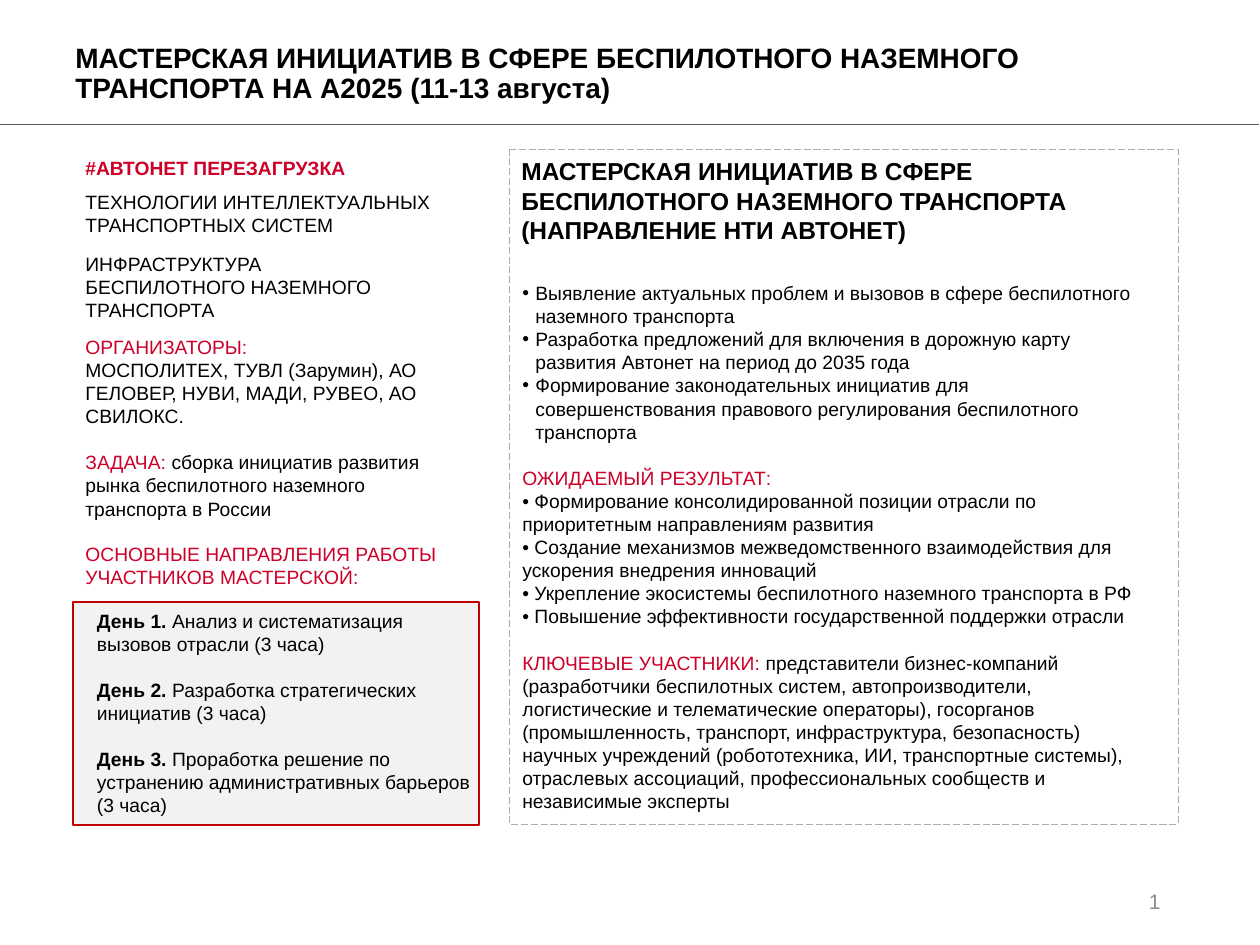
from dataclasses import dataclass

from lxml.etree import SubElement
from pptx import Presentation
from pptx.dml.color import RGBColor
from pptx.enum.dml import MSO_LINE
from pptx.enum.shapes import MSO_CONNECTOR, MSO_SHAPE
from pptx.enum.text import MSO_ANCHOR, PP_ALIGN
from pptx.oxml.ns import qn
from pptx.util import Emu, Pt

PX_PER_INCH = 126
BLACK, RED, FRAME_RED = "000000", "CC0029", "C00000"
RULE_GREY, FRAME_GREY, PANEL_GREY, NUMBER_GREY = "595959", "AFABAB", "F2F2F2", "8C8C8C"
LINE_GAP = 23
LEFT = 73


def px(length):
    return Emu(round(length * 914400 / PX_PER_INCH))


def rgb(value):
    return RGBColor.from_string(value)


@dataclass
class Span:
    text: str
    color: str = BLACK
    bold: bool = False
    new_line: bool = False


@dataclass
class Para:
    spans: list
    gap: int = 0
    bullet: bool = False


def plain(text, **options):
    return Para([Span(text)], **options)


class Slide:
    font = "Arial"
    bullet_indent = 13

    def __init__(self, deck):
        self.page = deck.slides.add_slide(deck.slide_layouts[6])

    def rule(self, x1, y1, x2, y2, color, width):
        line = self.page.shapes.add_connector(
            MSO_CONNECTOR.STRAIGHT, px(x1), px(y1), px(x2), px(y2))
        line.line.color.rgb = rgb(color)
        line.line.width = Pt(width)
        SubElement(line._element.spPr, qn("a:effectLst"))

    def panel(self, kind, at, color, width, fill=None, dash=None):
        shape = self.page.shapes.add_shape(kind, *map(px, at))
        shape.shadow.inherit = False
        if fill:
            shape.fill.solid()
            shape.fill.fore_color.rgb = rgb(fill)
        else:
            shape.fill.background()
        shape.line.color.rgb = rgb(color)
        shape.line.width = Pt(width)
        if dash:
            shape.line.dash_style = dash
        return shape

    def text(self, at, paras, size=11, anchor=MSO_ANCHOR.TOP,
             align=PP_ALIGN.LEFT, spacing=None, inset=True):
        box = self.page.shapes.add_textbox(*map(px, at))
        frame = box.text_frame
        frame.word_wrap = True
        frame.vertical_anchor = anchor
        if not inset:
            frame.margin_left = frame.margin_right = 0
            frame.margin_top = frame.margin_bottom = 0
        for index, para in enumerate(paras):
            paragraph = frame.add_paragraph() if index else frame.paragraphs[0]
            paragraph.alignment = align
            if spacing:
                paragraph.line_spacing = spacing
            if para.gap:
                paragraph.space_before = px(para.gap)
            if para.bullet:
                self.bullet(paragraph)
            for span in para.spans:
                self.span(paragraph, span, size)

    def bullet(self, paragraph):
        properties = paragraph._p.get_or_add_pPr()
        indent = px(self.bullet_indent)
        properties.set("marL", str(indent))
        properties.set("indent", str(-indent))
        SubElement(properties, qn("a:buFont"), typeface=self.font)
        SubElement(properties, qn("a:buChar"), char="•")

    def span(self, paragraph, span, size):
        if span.new_line:
            paragraph.add_line_break()
        run = paragraph.add_run()
        run.text = span.text
        run.font.name = self.font
        run.font.size = Pt(size)
        run.font.bold = span.bold
        run.font.color.rgb = rgb(span.color)


def add_header(slide):
    slide.rule(-1, 124, 1259, 124, RULE_GREY, 0.5)
    slide.text((890, 876, 283, 50), [Para([Span("1", NUMBER_GREY)])], size=12,
               anchor=MSO_ANCHOR.MIDDLE, align=PP_ALIGN.RIGHT)
    title = Span("МАСТЕРСКАЯ ИНИЦИАТИВ В СФЕРЕ БЕСПИЛОТНОГО НАЗЕМНОГО "
                 "ТРАНСПОРТА НА А2025 (11-13 августа)", bold=True)
    slide.text((63, 51, 1086, 47), [Para([title])], size=16,
               anchor=MSO_ANCHOR.MIDDLE, spacing=0.9)


def add_workshop(slide):
    frame = slide.panel(MSO_SHAPE.ROUNDED_RECTANGLE, (509, 149, 669, 675),
                        FRAME_GREY, 0.5, dash=MSO_LINE.LONG_DASH)
    frame.adjustments[0] = 0
    heading = Span("МАСТЕРСКАЯ ИНИЦИАТИВ В СФЕРЕ БЕСПИЛОТНОГО НАЗЕМНОГО "
                   "ТРАНСПОРТА (НАПРАВЛЕНИЕ НТИ АВТОНЕТ)", bold=True)
    slide.text((509, 150, 669, 102), [Para([heading])], size=14)

    goals = [
        "Выявление актуальных проблем и вызовов в сфере беспилотного наземного транспорта",
        "Разработка предложений для включения в дорожную карту развития Автонет "
        "на период до 2035 года",
        "Формирование законодательных инициатив для совершенствования правового "
        "регулирования беспилотного транспорта",
    ]
    results = [
        "• Формирование консолидированной позиции отрасли по приоритетным "
        "направлениям развития",
        "• Создание механизмов межведомственного взаимодействия для ускорения "
        "внедрения инноваций",
        "• Укрепление экосистемы беспилотного наземного транспорта в РФ",
        "• Повышение эффективности государственной поддержки отрасли",
    ]
    participants = (
        "представители бизнес-компаний (разработчики беспилотных систем, "
        "автопроизводители, логистические и телематические операторы), госорганов "
        "(промышленность, транспорт, инфраструктура, безопасность) научных учреждений "
        "(робототехника, ИИ, транспортные системы), отраслевых ассоциаций, "
        "профессиональных сообществ и независимые эксперты")
    slide.text((510, 252 + LINE_GAP, 654, 549), [
        *[plain(goal, bullet=True) for goal in goals],
        Para([Span("ОЖИДАЕМЫЙ РЕЗУЛЬТАТ:", RED)], gap=LINE_GAP),
        *[plain(result) for result in results],
        Para([Span("КЛЮЧЕВЫЕ УЧАСТНИКИ: ", RED), Span(participants)], gap=LINE_GAP),
    ])


def add_topics(slide):
    slide.text((LEFT, 150, 292, 37),
               [Para([Span("#АВТОНЕТ ПЕРЕЗАГРУЗКА", RED, bold=True)])])
    slide.text((LEFT, 184, 398, 59),
               [plain("ТЕХНОЛОГИИ ИНТЕЛЛЕКТУАЛЬНЫХ ТРАНСПОРТНЫХ СИСТЕМ")])
    slide.text((LEFT, 246, 397, 83), [Para([
        Span("ИНФРАСТРУКТУРА"),
        Span("БЕСПИЛОТНОГО НАЗЕМНОГО ТРАНСПОРТА", new_line=True)])])
    slide.text((LEFT, 329, 393, 199), [
        Para([Span("ОРГАНИЗАТОРЫ:", RED),
              Span("МОСПОЛИТЕХ, ТУВЛ (Зарумин), АО ГЕЛОВЕР, НУВИ, МАДИ, РУВЕО, АО СВИЛОКС.",
                   new_line=True)]),
        Para([Span("ЗАДАЧА: ", RED),
              Span("сборка инициатив развития рынка беспилотного наземного "
                   "транспорта в России")], gap=LINE_GAP),
    ])
    slide.text((LEFT, 536, 393, 59),
               [Para([Span("ОСНОВНЫЕ НАПРАВЛЕНИЯ РАБОТЫ УЧАСТНИКОВ МАСТЕРСКОЙ:", RED)])])


def add_days(slide):
    slide.panel(MSO_SHAPE.RECTANGLE, (LEFT, 602, 406, 223), FRAME_RED, 1, fill=PANEL_GREY)
    days = [
        "Анализ и систематизация вызовов отрасли (3 часа)",
        "Разработка стратегических инициатив (3 часа)",
        "Проработка решение по устранению административных барьеров (3 часа)",
    ]
    slide.text((97, 609, 382, 210), [
        Para([Span(f"День {number}.", bold=True), Span(f" {work}")],
             gap=LINE_GAP if number > 1 else 0)
        for number, work in enumerate(days, start=1)], inset=False)


def main():
    deck = Presentation()
    deck.slide_width, deck.slide_height = px(1260), px(945)
    slide = Slide(deck)
    add_header(slide)
    add_workshop(slide)
    add_topics(slide)
    add_days(slide)
    deck.save("out.pptx")


if __name__ == "__main__":
    main()
